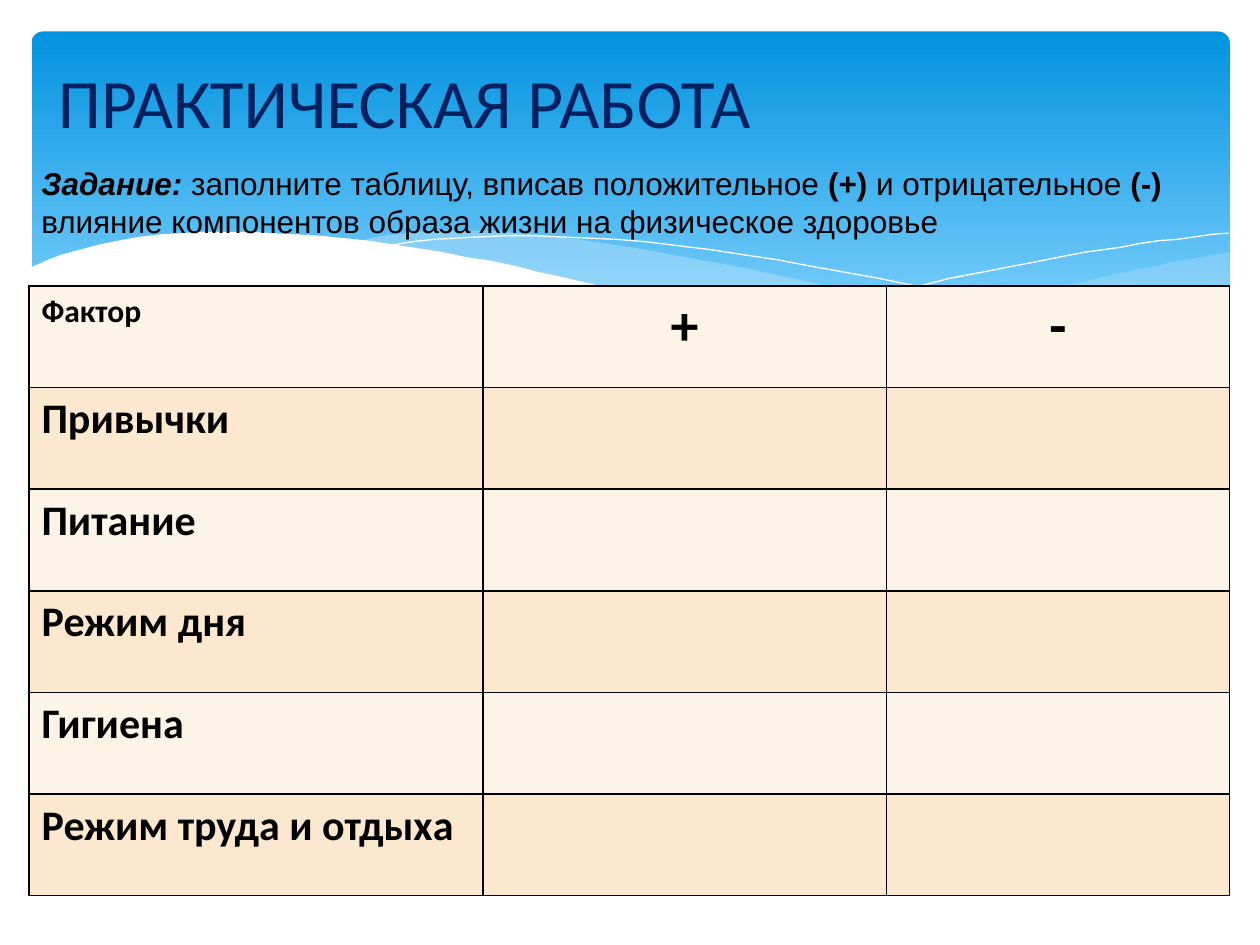
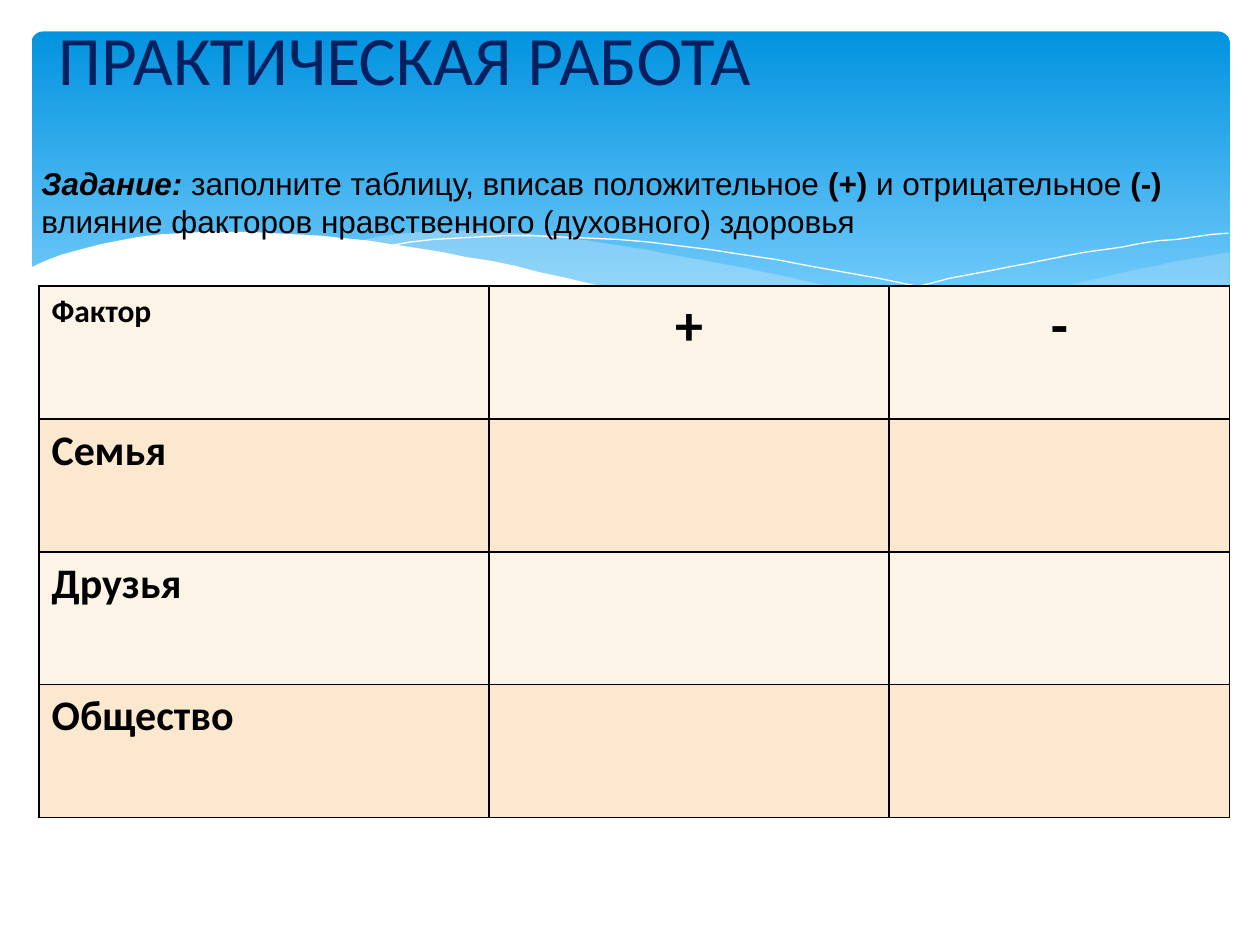
"""Build two worksheet slides: a blue wave band, a title, a task and a table to fill in."""
from dataclasses import dataclass
from math import comb

from lxml import etree
from pptx import Presentation
from pptx import util as u
from pptx.dml import color as c
from pptx.enum import shapes, text as t
from pptx.oxml import ns


@dataclass(frozen=True)
class Theme:
    sky_top: str = "0293E0"
    sky_bottom: str = "83D3FE"
    foam: str = "C6E7FC"
    white: str = "FFFFFF"
    navy: str = "002060"
    black: str = "000000"
    light_row: str = "FDF4E8"
    dark_row: str = "FBE8CF"
    heading_font: str = "Calibri"
    task_font: str = "Arial"
    title_size: float = 39.6
    sign_size: int = 32
    factor_size: int = 24
    small_size: int = 18
    border: int = 1


theme = Theme()
rgb = c.RGBColor.from_string


def write(para, text, *, size, font=theme.heading_font, color=theme.black,
          bold=False, italic=False, align=None):
    span = para.add_run()
    span.text = text
    span.font.size, span.font.name = u.Pt(size), font
    span.font.bold, span.font.italic = bold, italic
    span.font.color.rgb = rgb(color)
    if align is not None:
        para.alignment = align


def bezier(controls, steps=24):
    degree = len(controls) - 1
    points = []
    for step in range(steps + 1):
        share = step / steps
        weights = [comb(degree, k) * share ** k * (1 - share) ** (degree - k)
                   for k in range(degree + 1)]
        points.append(tuple(sum(weight * control[axis] for weight, control in zip(weights, controls))
                            for axis in (0, 1)))
    return points


deck = Presentation()
deck.slide_width, deck.slide_height = u.Inches(10), u.Inches(7.5)
columns, rows = 1000, 750
column, row = deck.slide_width // columns, deck.slide_height // rows
scale = (column, row, column, row)

band_area = (25, 25, 951, 270)
title_left, title_width, title_height = 33, 576, 92
task_area = (23, 125, 953, 71)
table_top = 227
column_shares = (0.378, 0.336, 0.286)

right_wave = [[(976, 200), (890, 213), (770, 247), (661, 265)],
              [(661, 265), (765, 282), (890, 285), (976, 247)]]
middle_wave = [[(893, 273), (690, 244), (425, 156), (286, 191)],
               [(286, 191), (480, 218), (680, 300), (893, 273)]]
long_crest = [[(309, 195), (440, 171), (657, 202), (907, 272)]]
right_crest = [[(613, 257), (735, 222), (870, 195), (975, 185)]]
white_wave = [[(977, 246), (827, 308), (617, 261), (447, 220)],
              [(447, 220), (297, 184), (123, 164), (23, 213)],
              [(23, 329), (977, 329)]]
filled_waves = [(right_wave, theme.foam, 29), (middle_wave, theme.foam, 40)]
crests = [(long_crest, None, 100), (right_crest, None, 100)]
waves = filled_waves + crests + [(white_wave, theme.white, 100)]

worksheets = [
    dict(title_top=34, table_left=23, table_width=953, table_height=484,
         factors=["Привычки", "Питание", "Режим дня", "Гигиена", "Режим труда и отдыха"],
         goal=" влияние компонентов образа жизни на физическое здоровье"),
    dict(title_top=0, table_left=31, table_width=945, table_height=422,
         factors=["Семья", "Друзья", "Общество"],
         goal=" влияние факторов нравственного (духовного) здоровья")]

for sheet in worksheets:
    page = deck.slides.add_slide(deck.slide_layouts[6])
    title_area = (title_left, sheet["title_top"], title_width, title_height)
    table_area = (sheet["table_left"], table_top, sheet["table_width"], sheet["table_height"])
    band_box, title_box, table_box, task_box = (
        [length * unit for length, unit in zip(area, scale)]
        for area in (band_area, title_area, table_area, task_area))

    band = page.shapes.add_shape(shapes.MSO_SHAPE.ROUNDED_RECTANGLE, *band_box)
    band.adjustments[0] = 0.034
    band.shadow.inherit = False
    band.line.fill.background()
    band.fill.gradient()
    band.fill.gradient_angle = 270
    for stop, position, shade in zip(band.fill.gradient_stops, (0, 0.9),
                                     (theme.sky_top, theme.sky_bottom)):
        stop.position = position
        stop.color.rgb = rgb(shade)

    for strokes, shade, opacity in waves:
        start, *others = [point for stroke in strokes for point in bezier(stroke)]
        outline = page.shapes.build_freeform(*start, scale=(column, row))
        outline.add_line_segments(others, close=shade is not None)
        wave = outline.convert_to_shape()
        wave.shadow.inherit = False
        if shade is None:
            wave.fill.background()
            wave.line.color.rgb = rgb(theme.white)
            wave.line.width = u.Pt(0)
            continue
        wave.line.fill.background()
        wave.fill.solid()
        wave.fill.fore_color.rgb = rgb(shade)
        if opacity < 100:
            paint = wave.element.spPr.find(ns.qn("a:solidFill"))[0]
            etree.SubElement(paint, ns.qn("a:alpha"), val=str(opacity * 1000))

    title = page.shapes.add_textbox(*title_box).text_frame
    title.word_wrap = True
    title.vertical_anchor = t.MSO_ANCHOR.MIDDLE
    write(title.paragraphs[0], "ПРАКТИЧЕСКАЯ РАБОТА", size=theme.title_size,
          color=theme.navy, align=t.PP_ALIGN.CENTER)

    factors = sheet["factors"]
    table = page.shapes.add_table(len(factors) + 1, len(column_shares), *table_box).table
    table.first_row = table.horz_banding = False
    for table_column, share in zip(table.columns, column_shares):
        table_column.width = int(sheet["table_width"] * share * column)
    for index, table_row in enumerate(table.rows):
        for cell in table_row.cells:
            cell.fill.solid()
            cell.fill.fore_color.rgb = rgb(theme.dark_row if index % 2 else theme.light_row)
            properties = cell._tc.get_or_add_tcPr()
            for order, side in enumerate("LRTB"):
                edge = etree.Element(ns.qn(f"a:ln{side}"), w=str(u.Pt(theme.border)))
                paint = etree.SubElement(edge, ns.qn("a:solidFill"))
                etree.SubElement(paint, ns.qn("a:srgbClr"), val=theme.black)
                properties.insert(order, edge)

    center = t.PP_ALIGN.CENTER
    labels = [(0, 0, "Фактор", theme.small_size, None),
              (0, 1, "+", theme.sign_size, center),
              (0, 2, "-", theme.sign_size, center)]
    labels += [(index, 0, factor, theme.factor_size, None)
               for index, factor in enumerate(factors, start=1)]
    for line, place, label, size, align in labels:
        write(table.cell(line, place).text_frame.paragraphs[0], label,
              size=size, bold=True, align=align)

    task = page.shapes.add_textbox(*task_box).text_frame
    task.word_wrap = True
    for words, bold, italic in [("Задание: ", True, True),
                                ("заполните таблицу, вписав положительное ", False, False),
                                ("(+)", True, False),
                                (" и отрицательное ", False, False),
                                ("(-)", True, False),
                                (sheet["goal"], False, False)]:
        write(task.paragraphs[0], words, size=theme.small_size, font=theme.task_font,
              bold=bold, italic=italic)

deck.save("out.pptx")
